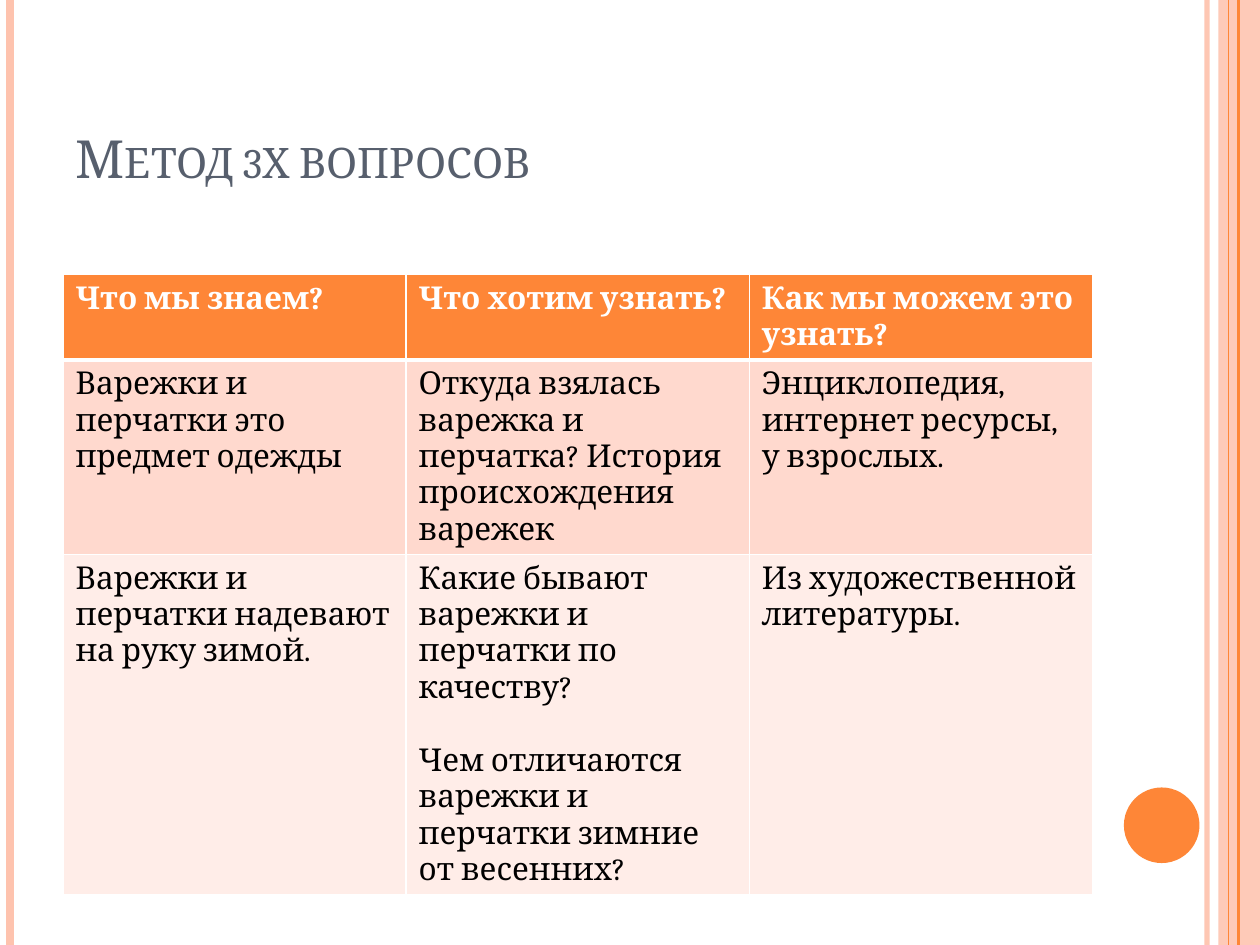
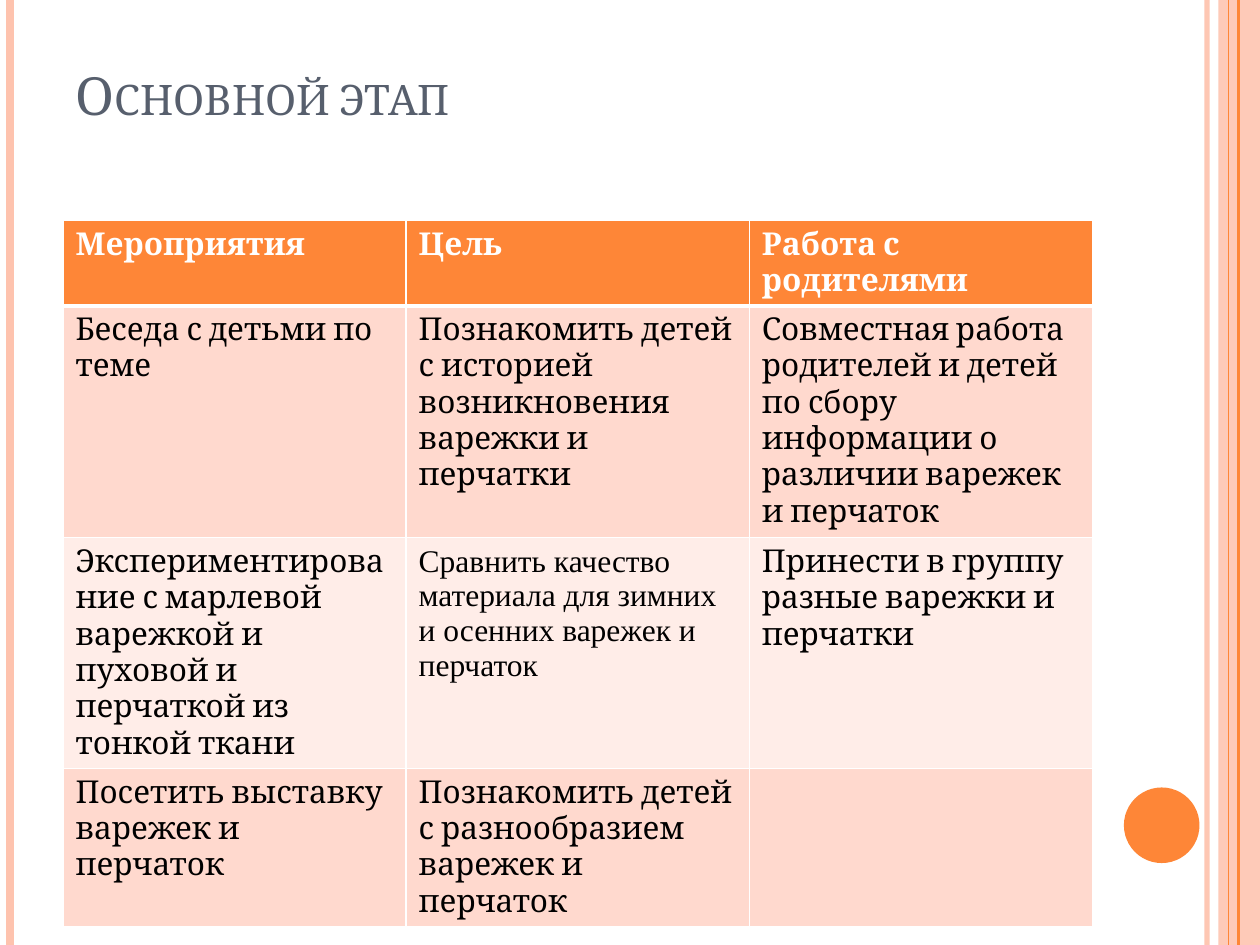
"""Build two slides with tables about a mittens and gloves project."""
from pptx import Presentation
from pptx.dml.color import RGBColor
from pptx.enum.shapes import MSO_CONNECTOR, MSO_SHAPE
from pptx.enum.text import MSO_ANCHOR, MSO_AUTO_SIZE, PP_ALIGN
from pptx.oxml.ns import qn
from pptx.util import Inches, Pt
from lxml.etree import SubElement

ORANGE = RGBColor(0xFE, 0x86, 0x37)
PEACH = RGBColor(0xFE, 0xC3, 0xAE)
SLATE = RGBColor(0x57, 0x5F, 0x6D)
WHITE = RGBColor(0xFF, 0xFF, 0xFF)
BLACK = RGBColor(0, 0, 0)
BANDS = [RGBColor(0xFF, 0xED, 0xE8), RGBColor(0xFF, 0xD9, 0xCE)]
FONT = "Cambria"
LEFT, WIDTH = 0.5, 8.17
STRIPES = [(9.58, PEACH, 3, 93), (0.08, PEACH, 4.5, 100),
           (9.83, ORANGE, 1.5, 100), (9.75, ORANGE, 0.75, 100)]

SLIDES = [
    {
        "title": "Метод 3х вопросов", "title_inset": 0.05, "top": 2.18,
        "heights": [0.67, 1.54, 2.69],
        "rows": [
            ["Что мы знаем?", "Что хотим узнать?", "Как мы можем это узнать?"],
            ["Варежки и перчатки это предмет одежды",
             "Откуда взялась варежка и перчатка? История происхождения варежек",
             "Энциклопедия, интернет ресурсы, у взрослых."],
            ["Варежки и перчатки надевают на руку зимой.",
             "Какие бывают варежки и перчатки по качеству?\n"
             "Чем отличаются варежки и перчатки зимние от весенних?",
             "Из художественной литературы."],
        ],
        "fonts": {},
    },
    {
        "title": "Основной этап", "title_inset": 0.55, "top": 1.75,
        "heights": [0.67, 1.84, 1.83, 1.25],
        "rows": [
            ["Мероприятия", "Цель", "Работа с родителями"],
            ["Беседа с детьми по теме",
             "Познакомить детей с историей возникновения варежки и перчатки",
             "Совместная работа родителей и детей по сбору информации о "
             "различии варежек и перчаток"],
            ["Экспериментирование с марлевой варежкой и пуховой и перчаткой "
             "из тонкой ткани",
             "Сравнить качество материала для зимних и осенних варежек и перчаток",
             "Принести в группу разные варежки и перчатки"],
            ["Посетить выставку варежек и перчаток",
             "Познакомить детей с разнообразием варежек и перчаток", ""],
        ],
        "fonts": {(2, 1): "Times New Roman"},
    },
]


def set_alpha(shape, percent):
    color = next(shape._element.spPr.iter(qn("a:srgbClr")))
    SubElement(color, qn("a:alpha"), val=str(percent * 1000))


def set_border(cell, side, points):
    ln = SubElement(cell._tc.get_or_add_tcPr(), qn(f"a:ln{side}"),
                    w=str(Pt(points)))
    fill = SubElement(ln, qn("a:solidFill"))
    SubElement(fill, qn("a:srgbClr"), val=str(WHITE))


prs = Presentation()
prs.slide_width, prs.slide_height = Inches(10), Inches(7.5)

for content in SLIDES:
    s = prs.slides.add_slide(prs.slide_layouts[5])

    band = s.shapes.add_shape(MSO_SHAPE.RECTANGLE, Inches(9.67), 0,
                              Inches(0.33), prs.slide_height)
    circle = s.shapes.add_shape(MSO_SHAPE.OVAL, Inches(8.92), Inches(6.25),
                                Inches(0.6), Inches(0.6))
    for sp, color in [(band, PEACH), (circle, ORANGE)]:
        sp.shadow.inherit = False
        sp.fill.solid()
        sp.fill.fore_color.rgb = color
        sp.line.fill.background()
    set_alpha(band, 87)

    for x, color, points, alpha in STRIPES:
        line = s.shapes.add_connector(MSO_CONNECTOR.STRAIGHT, Inches(x), 0,
                                      Inches(x), prs.slide_height)
        line.line.color.rgb = color
        line.line.width = Pt(points)
        SubElement(line._element.spPr, qn("a:effectLst"))
        if alpha < 100:
            set_alpha(line, alpha)

    title = s.shapes.title
    title.left, title.top = Inches(LEFT), Inches(0.3)
    title.width, title.height = Inches(WIDTH), Inches(1.25)
    tf = title.text_frame
    tf.text = content["title"]
    tf.auto_size = MSO_AUTO_SIZE.NONE
    tf.vertical_anchor = MSO_ANCHOR.BOTTOM
    tf.margin_bottom = Inches(content["title_inset"])
    p = tf.paragraphs[0]
    p.alignment = PP_ALIGN.LEFT
    r = p.runs[0]
    r.font.name, r.font.size = FONT, Pt(30)
    r.font.color.rgb = SLATE
    r._r.get_or_add_rPr().set("cap", "small")

    rows, heights = content["rows"], content["heights"]
    table = s.shapes.add_table(len(rows), len(rows[0]), Inches(LEFT),
                               Inches(content["top"]), Inches(WIDTH),
                               Inches(sum(heights))).table
    table.horz_banding = False
    for i, texts in enumerate(rows):
        table.rows[i].height = Inches(heights[i])
        for j, text in enumerate(texts):
            cell = table.cell(i, j)
            for side in "LRTB":
                thick = (i, side) in [(0, "B"), (1, "T")]
                set_border(cell, side, 3 if thick else 1)
            cell.fill.solid()
            cell.fill.fore_color.rgb = BANDS[i % 2] if i else ORANGE
            cell.text_frame.text = text
            for k, p in enumerate(cell.text_frame.paragraphs):
                if k:
                    p.space_before = Pt(21)
                for r in p.runs:
                    r.font.name = content["fonts"].get((i, j), FONT)
                    r.font.size = Pt(18)
                    r.font.bold = i == 0
                    r.font.color.rgb = BLACK if i else WHITE

prs.save("out.pptx")
